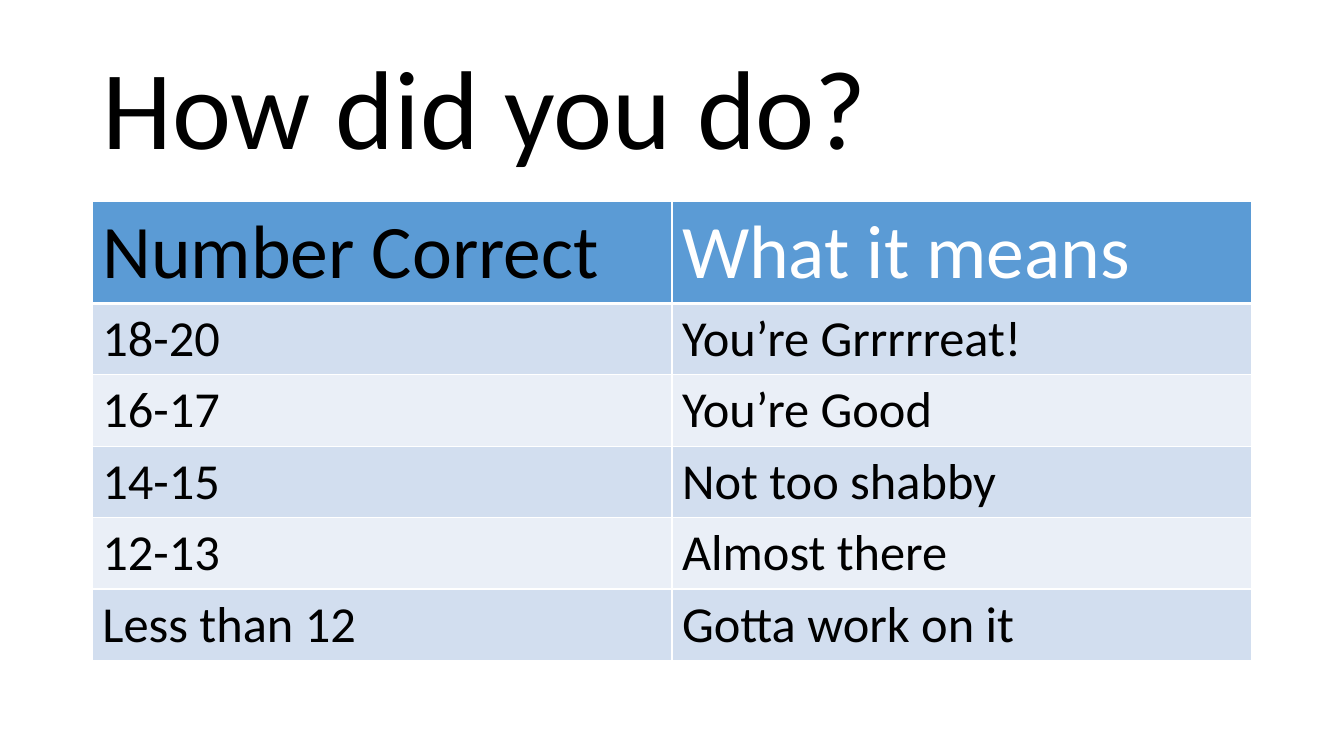
from typing import NamedTuple

from lxml.etree import SubElement as Sub
from pptx import Presentation
from pptx.dml.color import RGBColor as Color
from pptx.enum.text import MSO_ANCHOR as Anchor
from pptx.oxml.ns import qn
from pptx.util import Emu, Pt

BLACK = Color(0x00, 0x00, 0x00)
WHITE = Color(0xFF, 0xFF, 0xFF)
BLUE = Color(0x5B, 0x9B, 0xD5)
PALE = Color(0xD2, 0xDE, 0xEF)
LIGHT = Color(0xEA, 0xEF, 0xF7)

LEFT, WIDTH = 88, 1104
HEAD, BODY = 97, 68


class Row(NamedTuple):
    score: str
    sense: str


class Look(NamedTuple):
    size: int
    fill: Color
    inks: tuple[Color, Color]
    base: int


HEADER = Row("Number Correct", "What it means")
GRADES = (
    Row("18-20", "You’re Grrrrreat!"),
    Row("16-17", "You’re Good"),
    Row("14-15", "Not too shabby"),
    Row("12-13", "Almost there"),
    Row("Less than 12", "Gotta work on it"),
)


def px(count: int) -> Emu:
    return Emu(count * 9525)


def write(frame, text: str, size: int, ink: Color) -> None:
    run = frame.paragraphs[0].add_run()
    run.text = text
    style = {"name": "Calibri", "size": Pt(size), "bold": False}
    for name, value in style.items():
        setattr(run.font, name, value)
    run.font.color.rgb = ink


def edge(cell, base: int) -> None:
    props = cell._tc.get_or_add_tcPr()
    for tag, width in {"a:lnL": 1, "a:lnR": 1, "a:lnT": 1, "a:lnB": base}.items():
        line = Sub(props, qn(tag), w=str(Pt(width)))
        Sub(Sub(line, qn("a:solidFill")), qn("a:srgbClr"), val=str(WHITE))


def title(slide) -> None:
    box = slide.shapes.add_textbox(px(LEFT), px(38), px(WIDTH), px(139))
    frame = box.text_frame
    layout = {"word_wrap": True, "vertical_anchor": Anchor.MIDDLE}
    for name, value in layout.items():
        setattr(frame, name, value)
    frame.paragraphs[0].line_spacing = 0.9
    write(frame, "How did you do?", 80, BLACK)


def fill_row(table, index: int, row: Row, look: Look) -> None:
    for col, (text, ink) in enumerate(zip(row, look.inks)):
        cell = table.cell(index, col)
        edge(cell, look.base)
        cell.fill.solid()
        cell.fill.fore_color.rgb = look.fill
        write(cell.text_frame, text, look.size, ink)


def grid(slide) -> None:
    count = len(GRADES)
    high = HEAD + BODY * count
    table = slide.shapes.add_table(
        count + 1, 2, px(LEFT), px(192), px(WIDTH), px(high)
    ).table
    for index, row in enumerate(table.rows):
        row.height = px(BODY if index else HEAD)
    fill_row(table, 0, HEADER, Look(54, BLUE, (BLACK, WHITE), 3))
    for index, row in enumerate(GRADES, 1):
        shade = PALE if index % 2 else LIGHT
        fill_row(table, index, row, Look(36, shade, (BLACK, BLACK), 1))


def main() -> None:
    deck = Presentation()
    deck.slide_width, deck.slide_height = px(1280), px(720)
    slide = deck.slides.add_slide(deck.slide_layouts[6])
    title(slide)
    grid(slide)
    deck.save("out.pptx")


if __name__ == "__main__":
    main()
